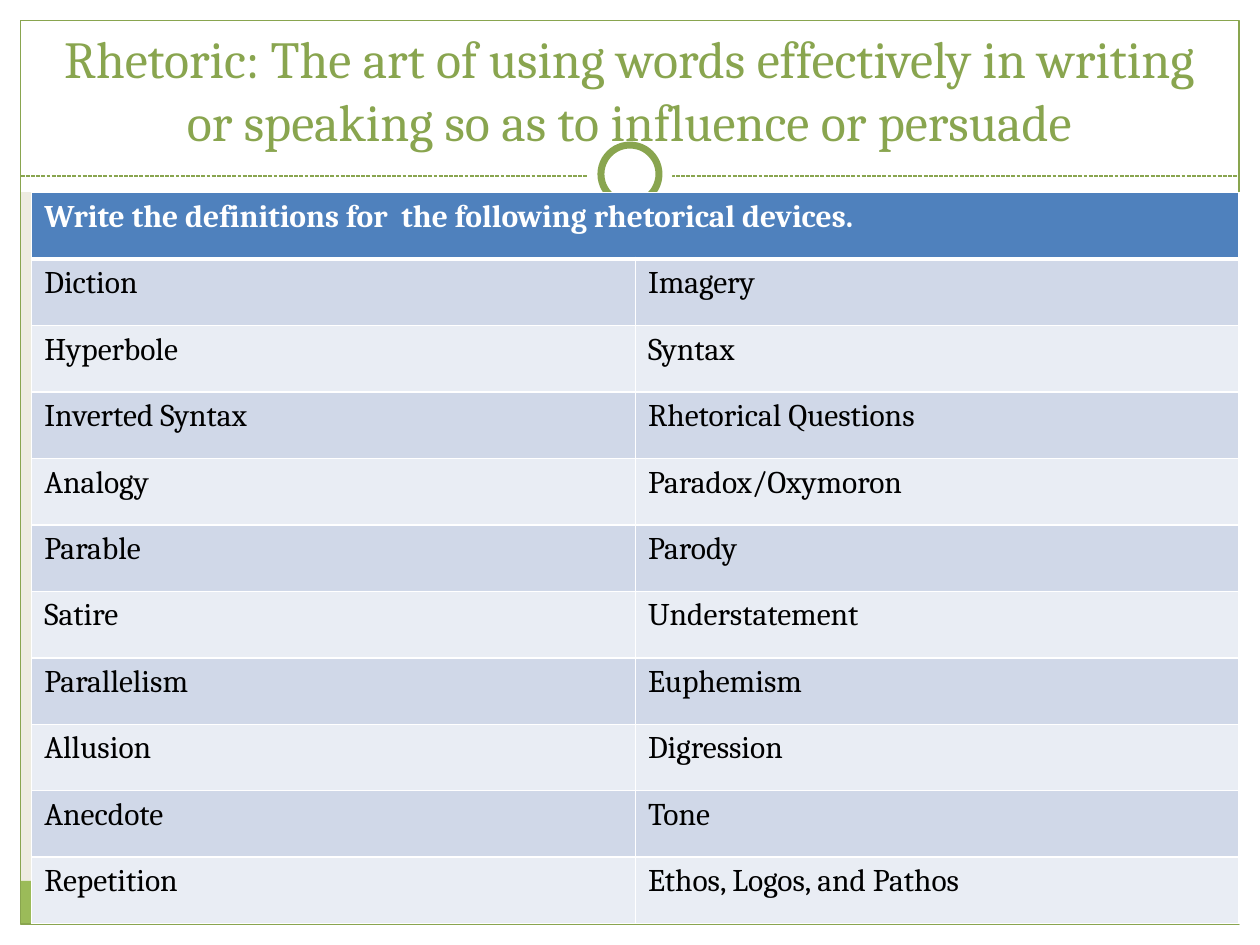
from lxml.etree import SubElement
from pptx import Presentation
from pptx.dml.color import RGBColor
from pptx.enum.dml import MSO_LINE
from pptx.enum.shapes import MSO_CONNECTOR, MSO_SHAPE
from pptx.enum.text import MSO_ANCHOR as ANCHOR, PP_ALIGN as ALIGN
from pptx.oxml.ns import qn
from pptx.util import Cm, Pt

WHITE = RGBColor(0xFF, 0xFF, 0xFF)
BLACK = RGBColor(0, 0, 0)
CREAM = RGBColor(0xEE, 0xEC, 0xE1)
GREEN = RGBColor(0x9B, 0xBB, 0x59)
OLIVE = RGBColor(0x89, 0xA5, 0x4F)
BLUE = RGBColor(0x4F, 0x81, 0xBD)
BANDS = (RGBColor(0xE9, 0xED, 0xF4), RGBColor(0xD0, 0xD8, 0xE8))

WIDTH, HEIGHT = 25.4, 19.05
EDGE = 0.42
INNER = WIDTH - 2 * EDGE
HEAD = 3.87
RING_X, RING_Y = WIDTH / 2, 3.51

TITLE = ("Rhetoric: The art of using words effectively in writing "
         "or speaking so as to influence or persuade")
HEADING = "Write the definitions for  the following rhetorical devices."
DEVICES = [
    ("Diction", "Imagery"),
    ("Hyperbole", "Syntax"),
    ("Inverted Syntax", "Rhetorical Questions"),
    ("Analogy", "Paradox/Oxymoron"),
    ("Parable", "Parody"),
    ("Satire", "Understatement"),
    ("Parallelism", "Euphemism"),
    ("Allusion", "Digression"),
    ("Anecdote", "Tone"),
    ("Repetition", "Ethos, Logos, and Pathos"),
]


class SlideBuilder:
    font = "Cambria"

    def __init__(self, slide):
        self.slide = slide
        self.shapes = slide.shapes

    def background(self, color):
        fill = self.slide.background.fill
        fill.solid()
        fill.fore_color.rgb = color

    def shape(self, kind, x, y, w, h, fill=None, line=None, width=0.75):
        sp = self.shapes.add_shape(kind, Cm(x), Cm(y), Cm(w), Cm(h))
        sp.shadow.inherit = False
        for fmt, color in ((sp.fill, fill), (sp.line.fill, line)):
            if color is None:
                fmt.background()
            else:
                fmt.solid()
                fmt.fore_color.rgb = color
        if line is not None:
            sp.line.width = Pt(width)

    def circle(self, size, **style):
        self.shape(MSO_SHAPE.OVAL, RING_X - size / 2, RING_Y - size / 2,
                   size, size, **style)

    def dashed_rule(self, x1, x2, y, color):
        cx = self.shapes.add_connector(MSO_CONNECTOR.STRAIGHT,
                                       Cm(x1), Cm(y), Cm(x2), Cm(y))
        cx.line.color.rgb = color
        cx.line.width = Pt(0.75)
        cx.line.dash_style = MSO_LINE.SQUARE_DOT
        SubElement(cx._element.spPr, qn("a:effectLst"))

    def text(self, tf, text, color, size, bold=False, align=ALIGN.LEFT):
        p = tf.paragraphs[0]
        p.alignment = align
        r = p.add_run()
        r.text = text
        r.font.color.rgb = color
        fmt = {"name": self.font, "size": Pt(size), "bold": bold}
        for name, value in fmt.items():
            setattr(r.font, name, value)

    def title(self, text, x, y, w, h):
        tf = self.shapes.add_textbox(Cm(x), Cm(y), Cm(w), Cm(h)).text_frame
        fmt = {"word_wrap": True, "vertical_anchor": ANCHOR.BOTTOM}
        for name, value in fmt.items():
            setattr(tf, name, value)
        self.text(tf, text, OLIVE, 29.7, align=ALIGN.CENTER)

    def cell(self, cell, fill, top=1, bottom=1):
        tcPr = cell._tc.get_or_add_tcPr()
        for side, width in {"L": 1, "R": 1, "T": top, "B": bottom}.items():
            ln = SubElement(tcPr, qn(f"a:ln{side}"), w=str(Pt(width)))
            solid = SubElement(ln, qn("a:solidFill"))
            SubElement(solid, qn("a:srgbClr"), val=str(WHITE))
        cell.fill.solid()
        cell.fill.fore_color.rgb = fill

    def table(self, heading, rows, x, y, w, h):
        tbl = self.shapes.add_table(len(rows) + 1, 2, Cm(x), Cm(y),
                                    Cm(w), Cm(h)).table
        for c in range(2):
            self.cell(tbl.cell(0, c), BLUE, bottom=3)
        tbl.cell(0, 0).merge(tbl.cell(0, 1))
        self.text(tbl.cell(0, 0).text_frame, heading, WHITE, 18, bold=True)
        for i, row in enumerate(rows, 1):
            for c, text in enumerate(row):
                cell = tbl.cell(i, c)
                self.cell(cell, BANDS[i % 2], top=3 if i == 1 else 1)
                self.text(cell.text_frame, text, BLACK, 18)


def main():
    prs = Presentation()
    prs.slide_width, prs.slide_height = Cm(WIDTH), Cm(HEIGHT)
    s = SlideBuilder(prs.slides.add_slide(prs.slide_layouts[6]))
    s.background(CREAM)

    margins = [
        (0, HEIGHT - EDGE, WIDTH, EDGE),
        (0, 0, WIDTH, HEAD),
        (0, 0, EDGE, HEIGHT),
        (WIDTH - EDGE, 0, EDGE, HEIGHT),
    ]
    for box in margins:
        s.shape(MSO_SHAPE.RECTANGLE, *box, fill=WHITE)
    s.shape(MSO_SHAPE.RECTANGLE, EDGE, 17.76, INNER, 0.87, fill=GREEN)
    s.shape(MSO_SHAPE.RECTANGLE, EDGE, EDGE, INNER, HEIGHT - 2 * EDGE,
            line=OLIVE)
    s.dashed_rule(EDGE, WIDTH - EDGE, 3.55, OLIVE)
    s.circle(1.7, fill=WHITE)
    s.circle(1.17, fill=WHITE, line=OLIVE, width=4)

    s.title(TITLE, 0.85, 0.64, 23.7, 2.54)
    s.table(HEADING, DEVICES, 0.64, 3.88, 24.34, 14.75)
    prs.save("out.pptx")


if __name__ == "__main__":
    main()
